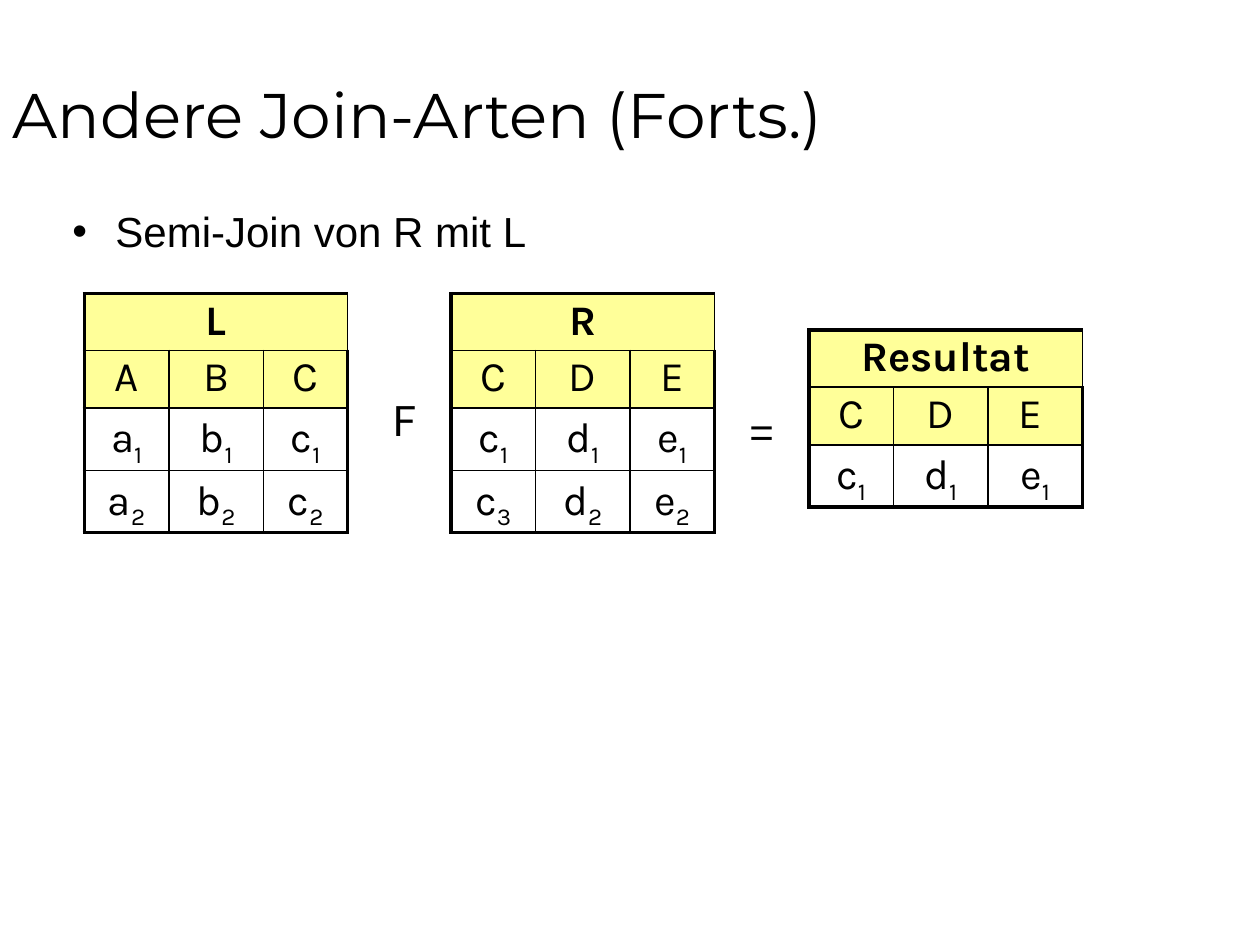
from dataclasses import dataclass

from lxml import etree
from pptx import Presentation
from pptx import util as u
from pptx.dml.color import RGBColor
from pptx.enum import text
from pptx.oxml.ns import qn


@dataclass(frozen=True)
class Theme:
    ink: str = "000000"
    header: str = "FFFF99"
    body: str = "FFFFFF"
    title_font: str = "Montserrat"
    table_font: str = "Karla"
    join_font: str = "Roboto"
    text_font: str = "Arial"
    title_size: float = 36
    text_size: float = 24
    outer_line: float = 2.25
    inner_line: float = 1


T = Theme()
ALIGN = text.PP_ALIGN


def add_text(p, value, font=T.text_font, size=T.text_size, bold=False,
             align=ALIGN.CENTER, sub=False):
    """Append one formatted run to a paragraph."""
    p.alignment = align
    r = p.add_run()
    r.text = value
    r.font.name = font
    r.font.size = u.Pt(size)
    r.font.bold = bold
    r.font.color.rgb = RGBColor.from_string(T.ink)
    if sub:
        r.font._element.set("baseline", "-25000")
    return r


def place(sp, left, top, width, height):
    sp.left, sp.top = u.Inches(left), u.Inches(top)
    sp.width, sp.height = u.Inches(width), u.Inches(height)


def set_borders(cell, widths):
    """Draw the cell's sides; widths maps L, R, T, B to points."""
    tc_pr = cell._tc.get_or_add_tcPr()
    for side in "LRTB":
        ln = etree.SubElement(tc_pr, qn("a:ln" + side), w=str(u.Pt(widths[side])))
        fill = etree.SubElement(ln, qn("a:solidFill"))
        etree.SubElement(fill, qn("a:srgbClr"), val=T.ink)


def add_title(slide, value, box):
    sp = slide.shapes.title
    place(sp, *box)
    tf = sp.text_frame
    tf.auto_size = text.MSO_AUTO_SIZE.NONE
    tf.vertical_anchor = text.MSO_ANCHOR.BOTTOM
    add_text(tf.paragraphs[0], value, font=T.title_font, size=T.title_size,
             align=ALIGN.LEFT)


def add_bullet(slide, value, box):
    sp = slide.placeholders[1]
    place(sp, *box)
    tf = sp.text_frame
    tf.auto_size = text.MSO_AUTO_SIZE.NONE
    p = tf.paragraphs[0]
    p.space_before = u.Pt(0)
    add_text(p, value)
    p_pr = p._p.get_or_add_pPr()
    p_pr.set("marL", str(u.Inches(0.25)))
    p_pr.set("indent", str(-u.Inches(0.25)))
    etree.SubElement(p_pr, qn("a:buChar"), char="•")


def add_operator(slide, value, font, box):
    sp = slide.shapes.add_textbox(*map(u.Inches, box))
    tf = sp.text_frame
    tf.word_wrap = True
    add_text(tf.paragraphs[0], value, font=font)


def add_relation(slide, name, columns, tuples, box, col_widths, row_heights):
    """Table with a merged name row, a row of attributes and its tuples."""
    rows = [[name, "", ""], columns, *tuples]
    last_row, last_col = len(rows) - 1, len(columns) - 1
    frame = slide.shapes.add_table(len(rows), len(columns), *map(u.Inches, box))
    table = frame.table
    table.first_row = table.horz_banding = False
    for col, width in zip(table.columns, col_widths):
        col.width = u.Inches(width)
    for row, height in zip(table.rows, row_heights):
        row.height = u.Inches(height)
    table.cell(0, 0).merge(table.cell(0, last_col))

    for i, row in enumerate(rows):
        for j, value in enumerate(row):
            cell = table.cell(i, j)
            edges = {"L": j == 0, "R": j == last_col,
                     "T": i == 0, "B": i == last_row}
            set_borders(cell, {side: T.outer_line if edge else T.inner_line
                               for side, edge in edges.items()})
            cell.fill.solid()
            cell.fill.fore_color.rgb = RGBColor.from_string(
                T.header if i < 2 else T.body)
            cell.margin_left = cell.margin_right = 0
            cell.margin_top = cell.margin_bottom = u.Inches(0.05)
            if not value:
                continue
            p = cell.text_frame.paragraphs[0]
            p.line_spacing = 0.9
            if i < 2:
                add_text(p, value, font=T.table_font, bold=i == 0)
            else:
                # Tuple values are a letter with an index
                add_text(p, value[0], font=T.table_font)
                add_text(p, value[1:], font=T.table_font, sub=True)


def main():
    prs = Presentation()
    prs.slide_width, prs.slide_height = u.Inches(10), u.Inches(7.5)
    slide = prs.slides.add_slide(prs.slide_layouts[1])

    # Heading and topic
    add_title(slide, "Andere Join-Arten (Forts.)", (0, 0, 10, 1.25))
    add_bullet(slide, " Semi-Join von R mit L", (0.25, 1.58, 4.25, 0.5))

    # Operands
    operand = dict(col_widths=(0.67, 0.75, 0.67),
                   row_heights=(0.25, 0.46, 0.46, 0.23))
    add_relation(slide, "L", ["A", "B", "C"],
                 [["a1", "b1", "c1"], ["a2", "b2", "c2"]],
                 (0.67, 2.33, 2.08, 1.84), **operand)
    add_relation(slide, "R", ["C", "D", "E"],
                 [["c1", "d1", "e1"], ["c3", "d2", "e2"]],
                 (3.58, 2.33, 2.08, 1.84), **operand)

    # Result
    add_relation(slide, "Resultat", ["C", "D", "E "], [["c1", "d1", "e1"]],
                 (6.42, 2.62, 2.17, 1.38), (0.67, 0.75, 0.75),
                 (0.25, 0.46, 0.46))

    # Operators between the tables
    add_operator(slide, "F", T.join_font, (2.92, 3.08, 0.58, 0.5))
    add_operator(slide, "=", T.text_font, (5.67, 3.17, 0.75, 0.5))

    prs.save("out.pptx")


if __name__ == "__main__":
    main()
